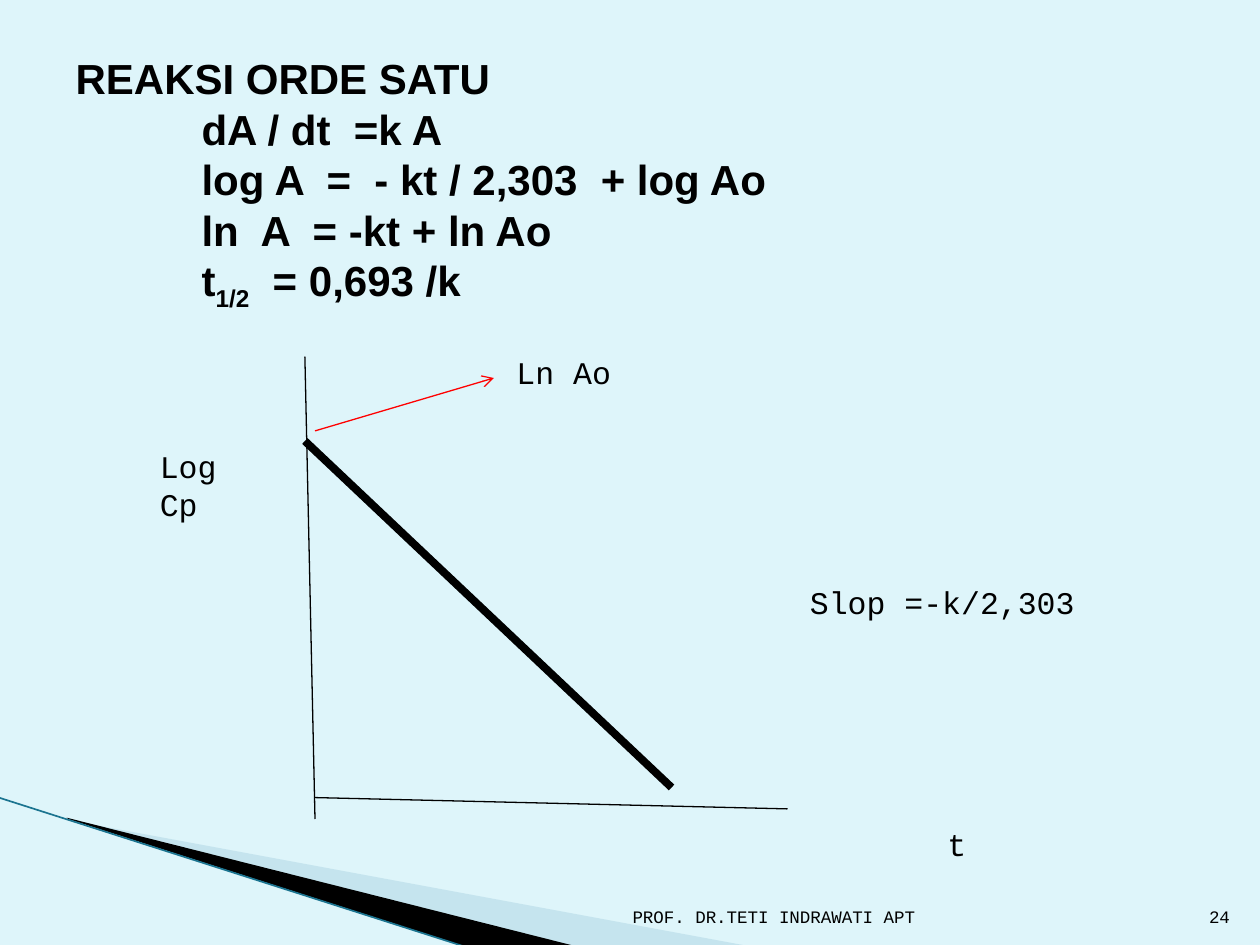
from lxml.etree import SubElement
from pptx import Presentation
from pptx.dml.color import RGBColor
from pptx.enum.shapes import MSO_CONNECTOR
from pptx.enum.text import MSO_ANCHOR, MSO_AUTO_SIZE, PP_ALIGN
from pptx.oxml.ns import qn
from pptx.util import Inches, Pt

COLORS = {
    "background": "DEF5FA",
    "wedge": "A0CBDC",
    "edge": "1B7490",
    "ink": "000000",
    "pointer": "FF0000",
}


def add_line(page, start, end, color, width):
    line = page.shapes.add_connector(
        MSO_CONNECTOR.STRAIGHT, *[Inches(value) for value in start + end]
    )
    line.line.color.rgb = RGBColor.from_string(COLORS[color])
    line.line.width = Pt(width)
    SubElement(line._element.spPr, qn("a:effectLst"))
    return line


def add_run(para, text, font, size):
    span = para.add_run()
    span.text = text
    span.font.name = font
    span.font.size = Pt(size)
    span.font.color.rgb = RGBColor.from_string(COLORS["ink"])
    return span


deck = Presentation()
deck.slide_width = Inches(10)
deck.slide_height = Inches(7.5)
page = deck.slides.add_slide(deck.slide_layouts[5])
page.background.fill.solid()
page.background.fill.fore_color.rgb = RGBColor.from_string(COLORS["background"])

wedges = [
    ("wedge", 40, [(0.55, 6.51), (5.95, 7.51), (4.56, 7.51), (0.55, 6.5)]),
    ("ink", 100, [(0.53, 6.49), (4.57, 7.51), (3.72, 7.52), (0.54, 6.5)]),
]
for color, opacity, corners in wedges:
    points = [(Inches(x), Inches(y)) for x, y in corners]
    builder = page.shapes.build_freeform(*points[0])
    builder.add_line_segments(points[1:], close=True)
    wedge = builder.convert_to_shape()
    wedge.shadow.inherit = False
    wedge.line.fill.background()
    wedge.fill.solid()
    wedge.fill.fore_color.rgb = RGBColor.from_string(COLORS[color])
    if opacity < 100:
        tint = wedge._element.spPr.find(qn("a:solidFill")).find(qn("a:srgbClr"))
        SubElement(tint, qn("a:alpha"), val=str(opacity * 1000))
add_line(page, (-0.01, 6.33), (3.71, 7.52), "edge", 0.95)

title = page.shapes.title
title.left, title.top = Inches(0.5), Inches(0.37)
title.width, title.height = Inches(7.75), Inches(2.52)
frame = title.text_frame
frame.word_wrap = True
frame.auto_size = MSO_AUTO_SIZE.NONE
frame.vertical_anchor = MSO_ANCHOR.TOP
formulas = [
    ["REAKSI ORDE SATU"],
    ["\tdA / dt  =k A"],
    ["\tlog A  =  - kt / 2,303  + log Ao"],
    ["\tln  A  = -kt + ln Ao"],
    ["\tt", "1/2", "  = 0,693 /k"],
]
for index, parts in enumerate(formulas):
    para = frame.add_paragraph() if index else frame.paragraphs[0]
    para.alignment = PP_ALIGN.LEFT
    tabs = SubElement(para._p.get_or_add_pPr(), qn("a:tabLst"))
    SubElement(tabs, qn("a:tab"), pos=str(Inches(1)), algn="l")
    for part in parts:
        span = add_run(para, part, "Arial", 24)
        span.font.bold = True
        if part == "1/2":
            span.font._element.set("baseline", "-25000")

add_line(page, (2.42, 2.83), (2.5, 6.5), "ink", 0.75)
add_line(page, (2.42, 3.5), (5.33, 6.25), "ink", 4.5)
add_line(page, (6.25, 6.42), (2.5, 6.33), "ink", 0.75)
pointer = add_line(page, (2.5, 3.42), (3.92, 3), "pointer", 0.75)
SubElement(pointer.line._get_or_add_ln(), qn("a:tailEnd"), type="arrow")

labels = [
    ("Slop =-k/2,303", 6.33, 4.58, 2.5, 0.71, 18),
    ("Ln Ao", 4, 2.75, 3.42, 0.71, 18),
    ("Log Cp", 1.17, 3.5, 0.75, 0.71, 18),
    ("t", 7.42, 6.5, 0.67, 0.42, 18),
    ("PROF. DR.TETI INDRAWATI APT", 4.79, 7.01, 2.57, 0.4, 10),
    ("24", 9.46, 7.01, 0.4, 0.4, 10),
]
for text, left, top, width, height, size in labels:
    box = page.shapes.add_textbox(
        Inches(left), Inches(top), Inches(width), Inches(height)
    )
    box.text_frame.word_wrap = True
    para = box.text_frame.paragraphs[0]
    if size == 10:
        box.text_frame.vertical_anchor = MSO_ANCHOR.BOTTOM
        para.alignment = PP_ALIGN.RIGHT
    add_run(para, text, "Courier New", size)

deck.save("out.pptx")
